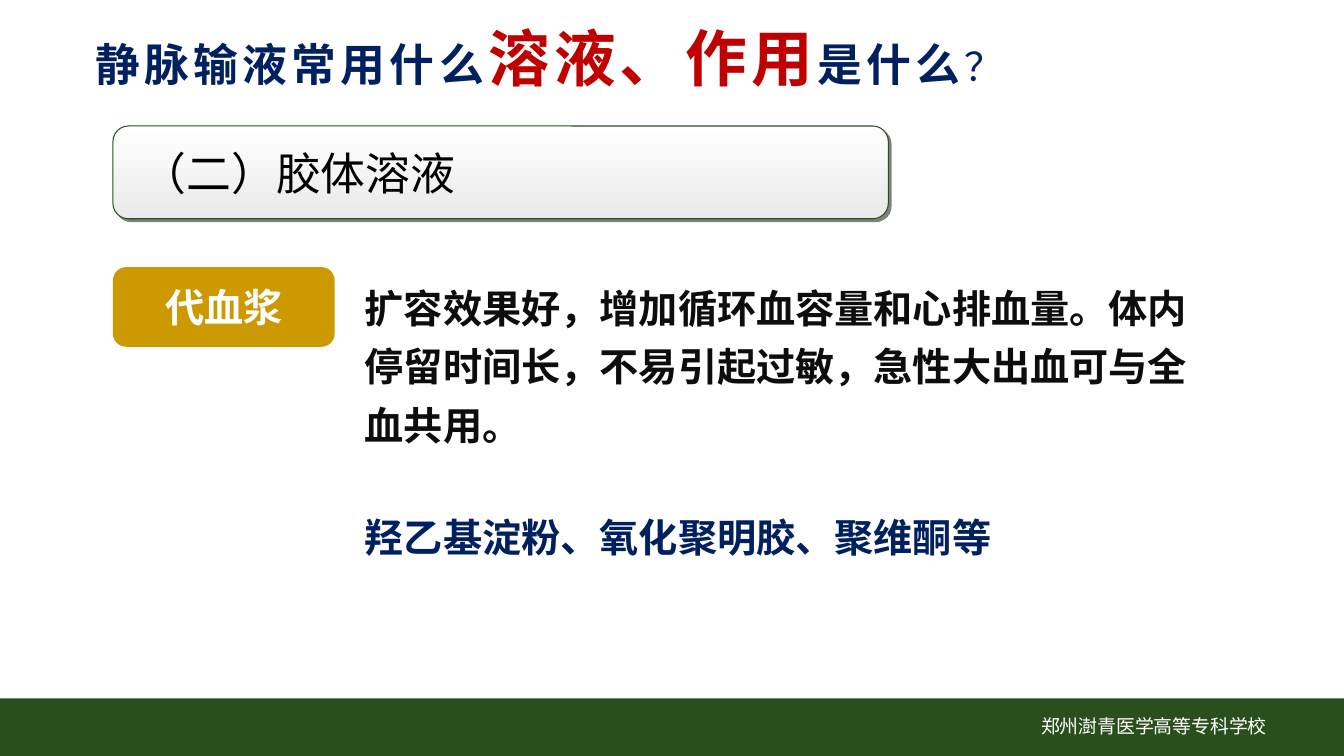
"""Build a slide on colloid solutions for intravenous infusion."""
import lxml.etree
import pptx
import pptx.dml.color
import pptx.enum.shapes
import pptx.enum.text
import pptx.oxml
import pptx.oxml.ns
import pptx.util
from pptx.util import Inches

COLORS = {
    "white": "FFFFFF", "silver": "EAEAEA", "green": "2A4F1C", "gold": "CC9900",
    "navy": "002060", "red": "C00000", "ink": "0D0D0D", "black": "000000",
}
CJK_FONT = "Noto Sans CJK SC"
SHAPES = pptx.enum.shapes.MSO_SHAPE
ALIGN = pptx.enum.text.PP_ALIGN
ANCHOR = pptx.enum.text.MSO_ANCHOR


def rgb(name):
    """Return the named color."""
    return pptx.dml.color.RGBColor.from_string(COLORS[name])


def add_run(paragraph, text, *, size, color, font="Arial", bold=False, spacing=0):
    """Append formatted text to a paragraph."""
    run = paragraph.add_run()
    run.text = text
    run.font.size = pptx.util.Pt(size)
    run.font.name = font
    run.font.bold = bold
    run.font.color.rgb = rgb(color)
    properties = run._r.get_or_add_rPr()
    if spacing:
        properties.set("spc", str(spacing * 100))
    east_asian = lxml.etree.SubElement(properties, pptx.oxml.ns.qn("a:ea"))
    east_asian.set("typeface", CJK_FONT)


def format_frame(shape, *, anchor=ANCHOR.TOP, align=ALIGN.LEFT, left_margin=0.1, line_spacing=None):
    """Set up a shape's text frame and return its first paragraph."""
    frame = shape.text_frame
    frame.word_wrap = True
    frame.vertical_anchor = anchor
    frame.margin_left = Inches(left_margin)
    paragraph = frame.paragraphs[0]
    paragraph.alignment = align
    if line_spacing:
        paragraph.line_spacing = line_spacing
    return paragraph


def add_text_box(slide, left, top, width, height, **layout):
    """Add a text box and return its first paragraph."""
    box = slide.shapes.add_textbox(Inches(left), Inches(top), Inches(width), Inches(height))
    return format_frame(box, **layout)


def add_panel(slide, kind, left, top, width, height, color):
    """Add a filled shape without outline or shadow."""
    shape = slide.shapes.add_shape(kind, Inches(left), Inches(top), Inches(width), Inches(height))
    shape.shadow.inherit = False
    shape.fill.solid()
    shape.fill.fore_color.rgb = rgb(color)
    shape.line.fill.background()
    return shape


def add_hard_shadow(shape):
    """Give a shape an unblurred shadow to the lower right."""
    effects = shape._element.spPr.find(pptx.oxml.ns.qn("a:effectLst"))
    effects.append(pptx.oxml.parse_xml(
        f'<a:outerShdw {pptx.oxml.ns.nsdecls("a")} blurRad="0" dist="{pptx.util.Pt(2.8)}" '
        f'dir="2700000" algn="ctr" rotWithShape="0"><a:srgbClr val="{COLORS["black"]}">'
        '<a:alpha val="50000"/></a:srgbClr></a:outerShdw>'))


def add_heading(slide, text):
    """Add the section heading on a gradient panel."""
    panel = add_panel(slide, SHAPES.ROUNDED_RECTANGLE, 1.12, 1.25, 7.69, 0.92, "white")
    panel.fill.gradient()
    panel.fill.gradient_angle = 270
    for stop, color, position in zip(panel.fill.gradient_stops, ("white", "silver"), (0, 1)):
        stop.color.rgb = rgb(color)
        stop.position = position
    panel.line.color.rgb = rgb("green")
    panel.line.width = pptx.util.Pt(0.75)
    add_hard_shadow(panel)
    paragraph = format_frame(panel, anchor=ANCHOR.MIDDLE, left_margin=0.24)
    add_run(paragraph, text, size=32, color="black")


def add_title(slide):
    """Add the title with its emphasized middle part."""
    paragraph = add_text_box(slide, 0.29, 0.15, 11.65, 0.84, left_margin=0.66)
    for text, size, color, bold in (
        ("静脉输液常用什么", 32, "navy", True),
        ("溶液、作用", 44, "red", True),
        ("是什么", 32, "navy", True),
        ("？", 28, "navy", False),
    ):
        add_run(paragraph, text, size=size, color=color, font=CJK_FONT, bold=bold, spacing=3)


def add_label(slide, text):
    """Add the gold label naming the solution."""
    label = add_panel(slide, SHAPES.ROUNDED_RECTANGLE, 1.12, 2.65, 2.2, 0.79, "gold")
    paragraph = format_frame(label, anchor=ANCHOR.MIDDLE, align=ALIGN.CENTER)
    add_run(paragraph, text, size=28, color="white", bold=True)


def add_body(slide, text, top, width, height, color):
    """Add a bold body text beside the label."""
    paragraph = add_text_box(slide, 3.52, top, width, height, line_spacing=1.25)
    add_run(paragraph, text, size=28, color=color, bold=True)


def add_footer(slide, text):
    """Add the green footer bar and the school name."""
    add_panel(slide, SHAPES.RECTANGLE, 0, 6.93, 13.33, 0.57, "green")
    paragraph = add_text_box(slide, 9.55, 6.9, 3.79, 0.6, anchor=ANCHOR.MIDDLE, align=ALIGN.CENTER)
    add_run(paragraph, text, size=13.5, color="white", font=CJK_FONT)


def main():
    """Create and save the presentation."""
    presentation = pptx.Presentation()
    presentation.slide_width = Inches(13.33)
    presentation.slide_height = Inches(7.5)
    slide = presentation.slides.add_slide(presentation.slide_layouts[6])
    add_footer(slide, "郑州澍青医学高等专科学校")
    add_heading(slide, "（二）胶体溶液")
    add_title(slide)
    add_label(slide, "代血浆")
    add_body(slide, "扩容效果好，增加循环血容量和心排血量。体内停留时间长，不易引起过敏，急性大出血可与全血共用。",
             2.65, 8.69, 1.81, "ink")
    add_body(slide, "羟乙基淀粉、氧化聚明胶、聚维酮等", 4.93, 7.01, 0.63, "navy")
    presentation.save("out.pptx")


if __name__ == "__main__":
    main()
